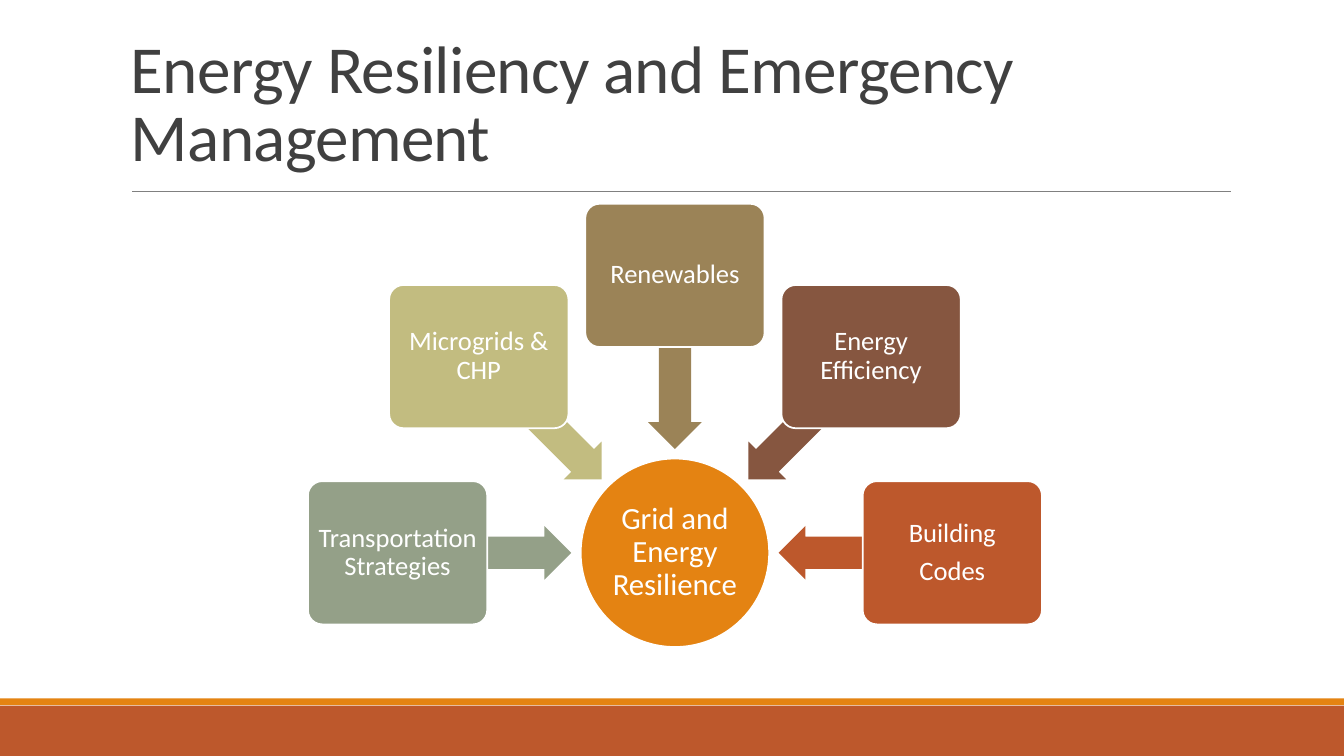
from math import cos, radians, sin

from pptx import Presentation
from pptx.dml.color import RGBColor
from pptx.enum.shapes import MSO_CONNECTOR as Connector
from pptx.enum.shapes import MSO_SHAPE as Shape
from pptx.enum.text import MSO_ANCHOR as Anchor
from pptx.enum.text import PP_ALIGN as Align
from pptx.oxml.ns import qn
from pptx.util import Cm, Pt

WHITE = RGBColor(0xFF, 0xFF, 0xFF)
CHARCOAL = RGBColor(0x40, 0x40, 0x40)
GREY = RGBColor(0x80, 0x80, 0x80)
ORANGE = RGBColor(0xE4, 0x83, 0x12)
RUST = RGBColor(0xBD, 0x58, 0x2C)
BROWN = RGBColor(0x86, 0x56, 0x40)
TAN = RGBColor(0x9B, 0x83, 0x57)
KHAKI = RGBColor(0xC2, 0xBC, 0x80)
SAGE = RGBColor(0x94, 0xA0, 0x88)

PAGE_WIDTH, PAGE_HEIGHT = 33.87, 19.05
HUB_X, HUB_Y, HUB_SIZE = 17.01, 13.93, 4.75
CARD_WIDTH, CARD_HEIGHT, CARD_RADIUS = 4.52, 3.61, 6.99
ARROW_LENGTH, ARROW_WIDTH, ARROW_RADIUS = 4.37, 1.35, 4.8

# Angle around the hub in degrees, anticlockwise from the right
STRATEGIES = [
    (0, "Building\nCodes", RUST),
    (45, "Energy Efficiency", BROWN),
    (90, "Renewables", TAN),
    (135, "Microgrids & CHP", KHAKI),
    (180, "Transportation Strategies", SAGE),
]


def around_hub(angle, radius):
    """Return the point at this angle and distance from the hub's centre."""
    turn = radians(angle)
    return HUB_X + radius * cos(turn), HUB_Y - radius * sin(turn)


class SlideBuilder:
    font_name = "Calibri"

    def __init__(self, page):
        self.page = page

    def shape(self, kind, left, top, width, height, fill, outlined=False):
        shape = self.page.shapes.add_shape(kind, Cm(left), Cm(top), Cm(width), Cm(height))
        shape.shadow.inherit = False
        shape.fill.solid()
        shape.fill.fore_color.rgb = fill
        if outlined:
            shape.line.color.rgb = WHITE
            shape.line.width = Pt(1.25)
        else:
            shape.line.fill.background()
        return shape

    def centred(self, kind, centre, width, height, fill, outlined=False):
        """Add a shape placed by its centre point."""
        x, y = centre
        return self.shape(kind, x - width / 2, y - height / 2, width, height, fill, outlined)

    def rule(self, left, right, y):
        line = self.page.shapes.add_connector(
            Connector.STRAIGHT, Cm(left), Cm(y), Cm(right), Cm(y))
        line.line.color.rgb = GREY
        line.line.width = Pt(0.5)
        properties = line._element.spPr
        properties.append(properties.makeelement(qn("a:effectLst"), {}))

    def style(self, paragraph, size, color, spacing):
        paragraph.line_spacing = spacing
        for span in paragraph.runs:
            span.font.name = self.font_name
            span.font.size = Pt(size)
            span.font.color.rgb = color

    def label(self, shape, text, size, inset):
        frame = shape.text_frame
        frame.word_wrap = True
        frame.vertical_anchor = Anchor.MIDDLE
        frame.margin_left = frame.margin_right = Cm(inset)
        frame.margin_top = frame.margin_bottom = Cm(inset)
        frame.text = text
        for paragraph in frame.paragraphs:
            paragraph.alignment = Align.CENTER
            paragraph.space_after = Pt(size * 0.35)
            self.style(paragraph, size, WHITE, 0.9)

    def title(self, text):
        box = self.page.shapes.add_textbox(Cm(3.05), Cm(0.5), Cm(27.94), Cm(4.05))
        frame = box.text_frame
        frame.word_wrap = True
        frame.vertical_anchor = Anchor.BOTTOM
        frame.text = text
        paragraph = frame.paragraphs[0]
        self.style(paragraph, 48, CHARCOAL, 0.85)
        paragraph.runs[0].font._element.set("spc", "-50")

    def hub(self, text):
        circle = self.centred(
            Shape.OVAL, (HUB_X, HUB_Y), HUB_SIZE, HUB_SIZE, ORANGE, outlined=True)
        self.label(circle, text, 22, 0.05)

    def strategy(self, angle, text, color):
        """Add a card and its arrow pointing at the hub."""
        arrow = self.centred(Shape.LEFT_ARROW, around_hub(angle, ARROW_RADIUS),
                             ARROW_LENGTH, ARROW_WIDTH, color)
        arrow.adjustments[0] = 0.6
        arrow.adjustments[1] = 0.5
        arrow.rotation = -angle % 360
        card = self.centred(Shape.ROUNDED_RECTANGLE, around_hub(angle, CARD_RADIUS),
                            CARD_WIDTH, CARD_HEIGHT, color, outlined=True)
        card.adjustments[0] = 0.1
        self.label(card, text, 19, 0.1)
        # Text stays upright while the arrow turns


def main():
    deck = Presentation()
    deck.slide_width, deck.slide_height = Cm(PAGE_WIDTH), Cm(PAGE_HEIGHT)
    builder = SlideBuilder(deck.slides.add_slide(deck.slide_layouts[6]))
    builder.shape(Shape.RECTANGLE, 0, 17.78, PAGE_WIDTH, 1.27, RUST)
    builder.shape(Shape.RECTANGLE, 0, 17.6, PAGE_WIDTH, 0.17, ORANGE)
    builder.rule(3.33, 31.01, 4.83)
    builder.title("Energy Resiliency and Emergency Management")
    builder.hub("Grid and Energy Resilience")
    for angle, text, color in STRATEGIES:
        builder.strategy(angle, text, color)
    deck.save("out.pptx")


if __name__ == "__main__":
    main()
